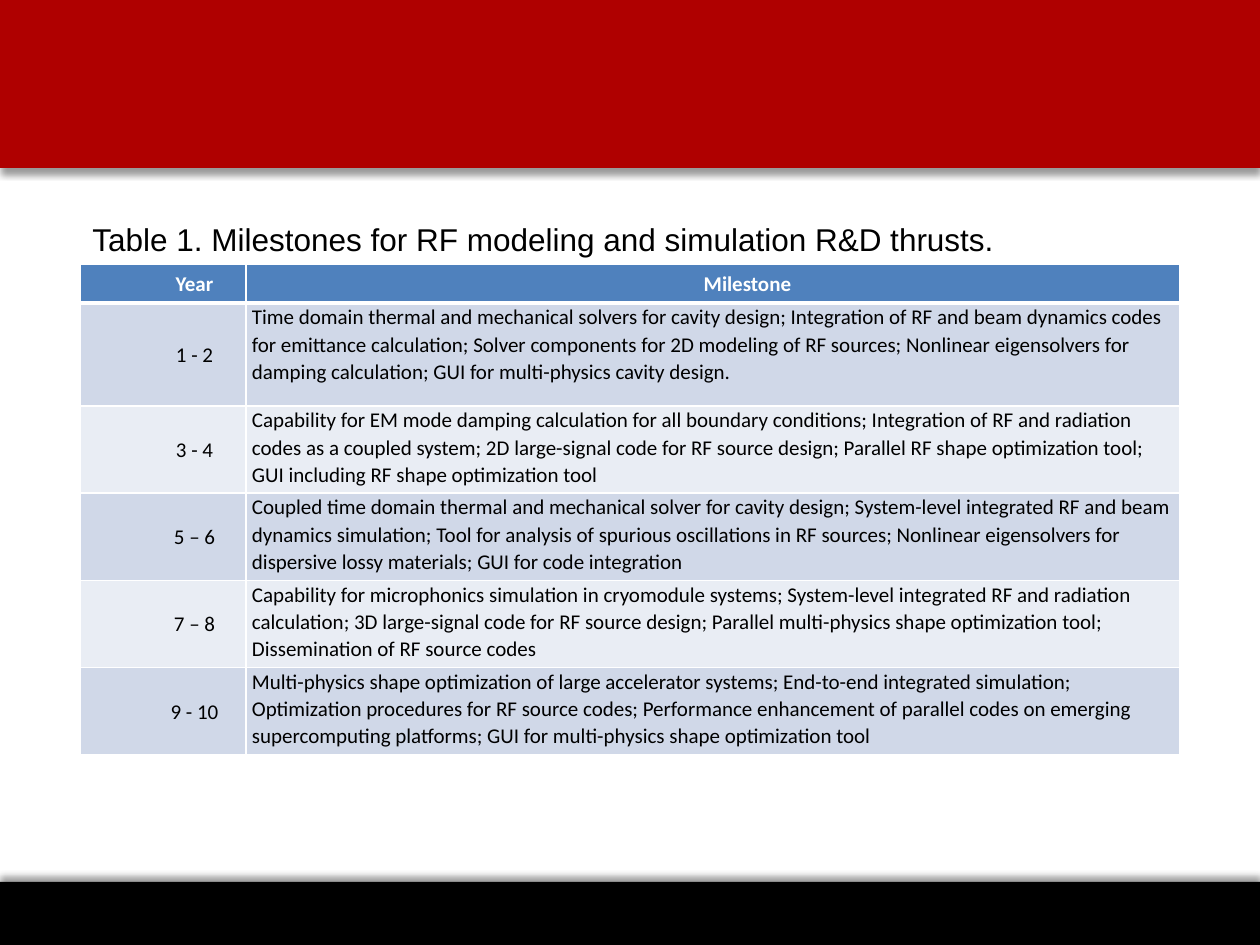
from lxml.etree import SubElement
from pptx import Presentation
from pptx.dml.color import RGBColor
from pptx.enum.shapes import MSO_SHAPE
from pptx.enum.text import MSO_ANCHOR, PP_ALIGN
from pptx.oxml.ns import qn
from pptx.util import Emu, Inches, Pt

PX_PER_INCH = 126
SLIDE_WIDTH, SLIDE_HEIGHT = 1260, 945

BLACK = RGBColor(0x00, 0x00, 0x00)
WHITE = RGBColor(0xFF, 0xFF, 0xFF)
RED = RGBColor(0xAF, 0x00, 0x00)
HEADER_BLUE = RGBColor(0x4F, 0x81, 0xBD)
BANDS = (RGBColor(0xD0, 0xD8, 0xE8), RGBColor(0xE9, 0xED, 0xF4))

CONTENT_LEFT = 80
COLUMN_WIDTHS = (166, 934)
ROW_HEIGHTS = (39, 103, 87, 87, 87, 87)

MILESTONES = (
    ("1 - 2",
     "Time domain thermal and mechanical solvers for cavity design; "
     "Integration of RF and beam dynamics codes for emittance calculation; "
     "Solver components for 2D modeling of RF sources; Nonlinear eigensolvers "
     "for damping calculation; GUI for multi-physics cavity design."),
    ("3 - 4",
     "Capability for EM mode damping calculation for all boundary conditions; "
     "Integration of RF and radiation codes as a coupled system; 2D "
     "large-signal code for RF source design; Parallel RF shape optimization "
     "tool; GUI including RF shape optimization tool"),
    ("5 – 6",
     "Coupled time domain thermal and mechanical solver for cavity design; "
     "System-level integrated RF and beam dynamics simulation; Tool for "
     "analysis of spurious oscillations in RF sources; Nonlinear eigensolvers "
     "for dispersive lossy materials; GUI for code integration"),
    ("7 – 8",
     "Capability for microphonics simulation in cryomodule systems; "
     "System-level integrated RF and radiation calculation; 3D large-signal "
     "code for RF source design; Parallel multi-physics shape optimization "
     "tool; Dissemination of RF source codes"),
    ("9 - 10",
     "Multi-physics shape optimization of large accelerator systems; "
     "End-to-end integrated simulation; Optimization procedures for RF source "
     "codes; Performance enhancement of parallel codes on emerging "
     "supercomputing platforms; GUI for multi-physics shape optimization tool"),
)


def px(length):
    return Emu(round(length * Inches(1) / PX_PER_INCH))


class SlideBuilder:
    """Holds the text style and the slide being drawn."""

    caption_font, caption_size = "Arial", Pt(18)
    table_font, table_size = "Calibri", Pt(12)

    def __init__(self, slide):
        self.slide = slide

    def run(self, paragraph, text, font, size, color, bold=False):
        run = paragraph.add_run()
        run.text = text
        run.font.name, run.font.size, run.font.bold = font, size, bold
        run.font.color.rgb = color

    def band(self, top, height, color, shadow_angle):
        """Draws a full-width bar whose shadow falls at the given angle."""
        bar = self.slide.shapes.add_shape(
            MSO_SHAPE.RECTANGLE, 0, px(top), px(SLIDE_WIDTH), px(height))
        bar.fill.solid()
        bar.fill.fore_color.rgb = color
        bar.line.fill.background()
        bar.shadow.inherit = False
        effects = bar._element.spPr.find(qn("a:effectLst"))
        shadow = SubElement(effects, qn("a:outerShdw"), blurRad=str(Pt(4)),
                            dist=str(Pt(3)), dir=str(shadow_angle * 60000),
                            rotWithShape="0")
        tint = SubElement(shadow, qn("a:srgbClr"), val=str(BLACK))
        SubElement(tint, qn("a:alpha"), val="40000")

    def caption(self, left, top, width, height, text):
        frame = self.slide.shapes.add_textbox(
            px(left), px(top), px(width), px(height)).text_frame
        frame.word_wrap = True
        frame.vertical_anchor = MSO_ANCHOR.MIDDLE
        self.run(frame.paragraphs[0], text,
                 self.caption_font, self.caption_size, BLACK)

    def borders(self, cell, bottom):
        properties = cell._tc.get_or_add_tcPr()
        for side, width in (("L", 1), ("R", 1), ("T", 1), ("B", bottom)):
            line = SubElement(properties, qn(f"a:ln{side}"), w=str(Pt(width)))
            fill = SubElement(line, qn("a:solidFill"))
            SubElement(fill, qn("a:srgbClr"), val=str(WHITE))

    def cell(self, cell, text, fill, margins, header=False, centered=False):
        """Fills a cell; margins run left, top, right, bottom."""
        self.borders(cell, bottom=3 if header else 1)
        cell.fill.solid()
        cell.fill.fore_color.rgb = fill
        (cell.margin_left, cell.margin_top,
         cell.margin_right, cell.margin_bottom) = map(px, margins)
        paragraph = cell.text_frame.paragraphs[0]
        paragraph.line_spacing = 1.07
        paragraph.space_after = Pt(6)
        if centered:
            paragraph.alignment = PP_ALIGN.CENTER
            properties = paragraph._p.get_or_add_pPr()
            properties.set("marL", "0")
            properties.set("indent", str(Inches(0.5)))
        self.run(paragraph, text, self.table_font, self.table_size,
                 WHITE if header else BLACK, bold=header)

    def milestone_table(self, left, top, headings, milestones):
        table = self.slide.shapes.add_table(
            len(ROW_HEIGHTS), len(COLUMN_WIDTHS), px(left), px(top),
            px(sum(COLUMN_WIDTHS)), px(sum(ROW_HEIGHTS))).table
        for column, width in zip(table.columns, COLUMN_WIDTHS):
            column.width = px(width)
        for row, height in zip(table.rows, ROW_HEIGHTS):
            row.height = px(height)

        for column, heading in enumerate(headings):
            self.cell(table.cell(0, column), heading, HEADER_BLUE,
                      (6, 6, 0 if column else 6, 5),
                      header=True, centered=True)
        for row, (years, milestone) in enumerate(milestones, start=1):
            fill = BANDS[(row - 1) % len(BANDS)]
            year_cell = table.cell(row, 0)
            self.cell(year_cell, years, fill, (0, 0, 0, 0), centered=True)
            year_cell.vertical_anchor = MSO_ANCHOR.MIDDLE
            self.cell(table.cell(row, 1), milestone, fill, (6, 0, 2, 5))


def main():
    presentation = Presentation()
    presentation.slide_width = px(SLIDE_WIDTH)
    presentation.slide_height = px(SLIDE_HEIGHT)
    builder = SlideBuilder(
        presentation.slides.add_slide(presentation.slide_layouts[6]))

    builder.band(882, 63, BLACK, shadow_angle=270)
    builder.band(0, 168, RED, shadow_angle=90)
    builder.milestone_table(CONTENT_LEFT, 264, ("Year", "Milestone"),
                            MILESTONES)
    builder.caption(CONTENT_LEFT, 215, sum(COLUMN_WIDTHS), 48,
                    "Table 1. Milestones for RF modeling and simulation "
                    "R&D thrusts.")
    presentation.save("out.pptx")


if __name__ == "__main__":
    main()
